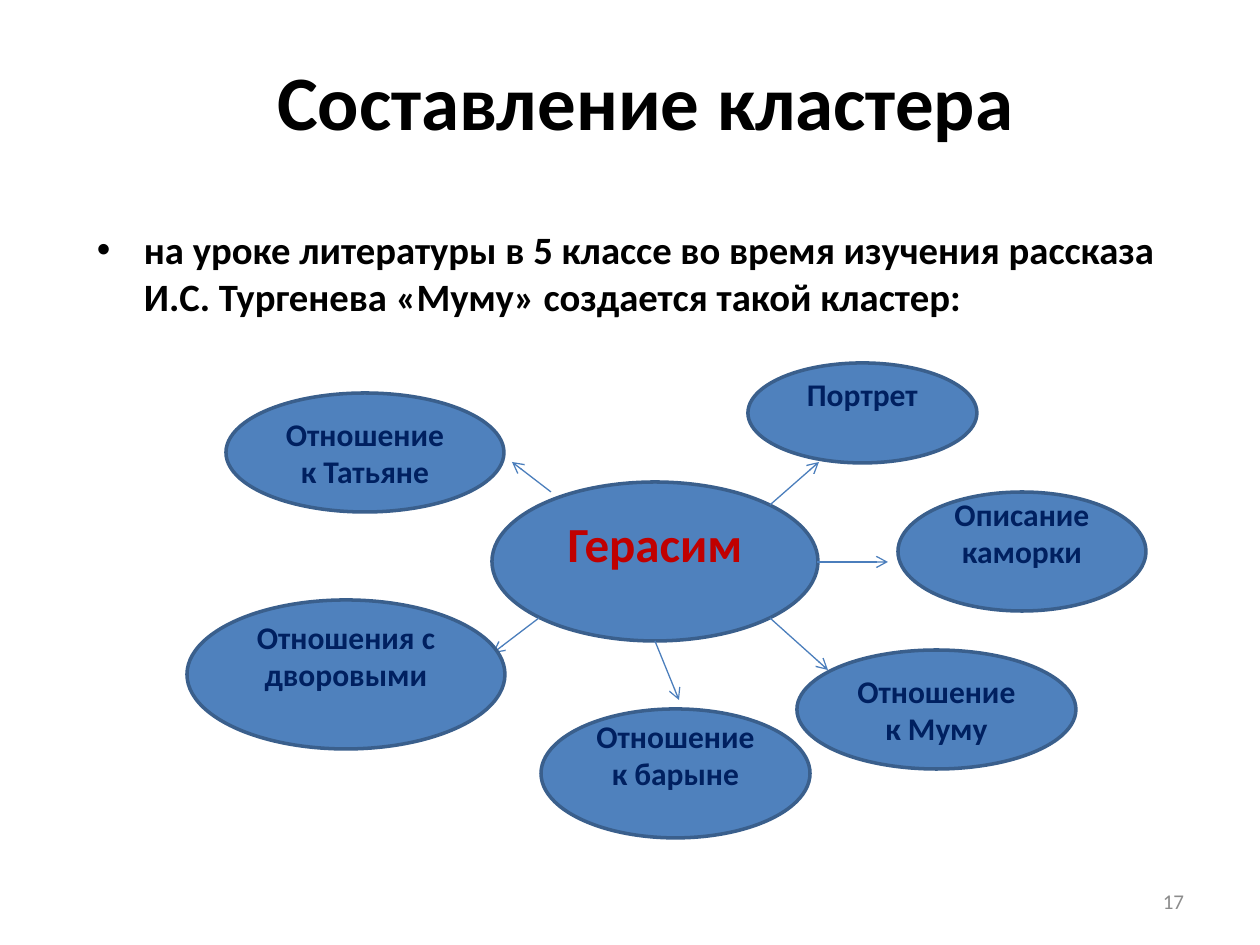
import pptx
import pptx.util
from lxml import etree
from pptx.dml.color import RGBColor
from pptx.enum.shapes import MSO_CONNECTOR, MSO_SHAPE
from pptx.enum.text import MSO_ANCHOR, PP_ALIGN
from pptx.oxml.ns import qn

PX = 914400 // 126
FONT = "Calibri"
INSET_X, INSET_Y = 13, 6
BULLET_INDENT = 47
COLORS = {
    "text": "000000",
    "number": "8C8C8C",
    "fill": "4F81BD",
    "outline": "3A5F8C",
    "arrow": "4B7EBC",
    "hub": "C00000",
    "topic": "002060",
}

TITLE = "Составление кластера"
INTRO = ("на уроке литературы в 5 классе во время изучения рассказа "
         "И.С. Тургенева «Муму» создается такой кластер:")
PAGE = "17"

# text, (left, top, width, height), size, colour, lift: room kept free below the text
HUB = ("Герасим", (492, 482, 326, 159), 28, "hub", 38)
TOPICS = [
    ("Портрет", (748, 363, 229, 100), 18, "topic", 38),
    ("Описание каморки", (898, 492, 248, 119), 18, "topic", 38),
    ("Отношение к Муму", (797, 650, 279, 119), 18, "topic", 0),
    ("Отношение к барыне", (541, 709, 269, 129), 18, "topic", 38),
    ("Отношения с дворовыми", (187, 600, 318, 149), 18, "topic", 38),
    ("Отношение к Татьяне", (226, 393, 278, 119), 18, "topic", 0),
]
# start x, start y, end x, end y
ARROWS = [
    (770, 505, 819, 462),
    (817, 562, 888, 562),
    (770, 618, 828, 670),
    (655, 641, 679, 700),
    (539, 618, 493, 653),
    (551, 492, 512, 462),
]


def px(*values):
    return [pptx.util.Emu(v * PX) for v in values]


def rgb(name):
    return RGBColor.from_string(COLORS[name])


def set_text(sp, text, size, color, bold=True, align=PP_ALIGN.CENTER,
             anchor=MSO_ANCHOR.MIDDLE, lift=0):
    tf = sp.text_frame
    tf.word_wrap = True
    tf.vertical_anchor = anchor
    tf.margin_left, tf.margin_right = px(INSET_X, INSET_X)
    tf.margin_top, tf.margin_bottom = px(INSET_Y, INSET_Y + lift)
    p = tf.paragraphs[0]
    p.text = text
    p.alignment = align
    font = p.runs[0].font
    font.name, font.size, font.bold = FONT, pptx.util.Pt(size), bold
    font.color.rgb = rgb(color)
    return p


def add_text(slide, box, *args, **kwargs):
    return set_text(slide.shapes.add_textbox(*px(*box)), *args, **kwargs)


def add_bullet(p):
    p.space_before = pptx.util.Pt(4.4)
    ppr = p._p.get_or_add_pPr()
    ppr.set("marL", str(BULLET_INDENT * PX))
    ppr.set("indent", str(-BULLET_INDENT * PX))
    etree.SubElement(ppr, qn("a:buFont")).set("typeface", "Arial")
    etree.SubElement(ppr, qn("a:buChar")).set("char", "•")


def add_ellipse(slide, text, box, size, color, lift):
    sp = slide.shapes.add_shape(MSO_SHAPE.OVAL, *px(*box))
    sp.shadow.inherit = False
    sp.fill.solid()
    sp.fill.fore_color.rgb = rgb("fill")
    sp.line.color.rgb = rgb("outline")
    sp.line.width = pptx.util.Pt(2)
    set_text(sp, text, size, color, lift=lift)


def add_arrow(slide, ends):
    line = slide.shapes.add_connector(MSO_CONNECTOR.STRAIGHT, *px(*ends))
    line.line.color.rgb = rgb("arrow")
    line.line.width = pptx.util.Pt(0.75)
    etree.SubElement(line.line._get_or_add_ln(), qn("a:tailEnd")).set("type", "arrow")
    etree.SubElement(line._element.spPr, qn("a:effectLst"))


def main():
    prs = pptx.Presentation()
    prs.slide_width, prs.slide_height = px(1260, 945)
    slide = prs.slides.add_slide(prs.slide_layouts[6])

    add_text(slide, (84, 32, 1124, 136), TITLE, 44, "text")
    add_bullet(add_text(slide, (84, 220, 1124, 669), INTRO, 22.1, "text",
                        align=PP_ALIGN.LEFT, anchor=MSO_ANCHOR.TOP))
    add_text(slide, (903, 876, 294, 50), PAGE, 12, "number",
             bold=False, align=PP_ALIGN.RIGHT)

    add_ellipse(slide, *HUB)
    for ends in ARROWS:
        add_arrow(slide, ends)
    for topic in TOPICS:
        add_ellipse(slide, *topic)

    prs.save("out.pptx")


if __name__ == "__main__":
    main()
